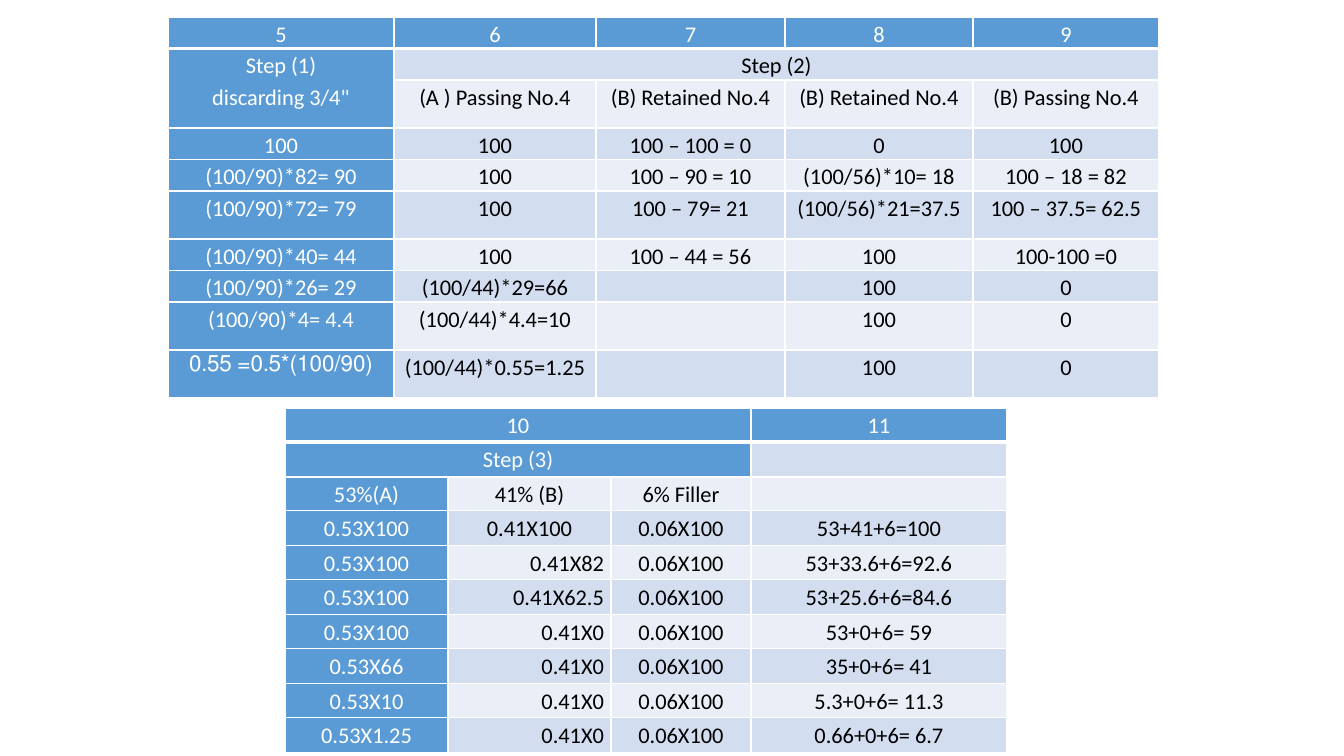
"""Build a slide with two tables of aggregate blending steps."""
from lxml import etree
from pptx import Presentation
from pptx.dml.color import RGBColor
from pptx.enum.text import PP_ALIGN
from pptx.oxml.ns import qn
from pptx.util import Pt

MID, RIGHT = PP_ALIGN.CENTER, PP_ALIGN.RIGHT
PX = 91440000 // 10080
BLUE, BANDS = "5B9BD5", ("EAEFF7", "D2DEEF")
WHITE, BLACK = "FFFFFF", "000000"


def color(code):
    return RGBColor.from_string(code)


def edge(cell, side, width):
    line = etree.SubElement(cell._tc.get_or_add_tcPr(), qn("a:ln" + side), w=str(Pt(width)))
    fill = etree.SubElement(line, qn("a:solidFill"))
    etree.SubElement(fill, qn("a:srgbClr"), val=WHITE)


steps = [
    ["5", "6", "7", "8", "9"],
    ["Step (1)\ndiscarding 3/4\"", "Step (2)", "", "", ""],
    ["", "(A ) Passing No.4", "(B) Retained No.4", "(B) Retained No.4", "(B) Passing No.4"],
    ["100", "100", "100 – 100 = 0", "0", "100"],
    ["(100/90)*82= 90", "100", "100 – 90 = 10", "(100/56)*10= 18", "100 – 18 = 82"],
    ["(100/90)*72= 79", "100", "100 – 79= 21", "(100/56)*21=37.5", "100 – 37.5= 62.5"],
    ["(100/90)*40= 44", "100", "100 – 44 = 56", "100", "100-100 =0"],
    ["(100/90)*26= 29", "(100/44)*29=66", "", "100", "0"],
    ["(100/90)*4= 4.4", "(100/44)*4.4=10", "", "100", "0"],
    ["(100/90)*0.5= 0.55", "(100/44)*0.55=1.25", "", "100", "0"],
]
mixes = [
    ("100", "100", "53+41+6=100"),
    ("100", "82", "53+33.6+6=92.6"),
    ("100", "62.5", "53+25.6+6=84.6"),
    ("100", "0", "53+0+6= 59"),
    ("66", "0", "35+0+6= 41"),
    ("10", "0", "5.3+0+6= 11.3"),
    ("1.25", "0", "0.66+0+6= 6.7"),
]
blend = [
    ["10", "", "", "11"],
    ["Step (3)", "", "", ""],
    ["53%(A)", "41% (B)", "6% Filler", ""],
]
blend += [["0.53X" + a, "0.41X" + b, "0.06X100", total] for a, b, total in mixes]

step_rtl = {(9, 0)}
blend_rtl = {(r, 0) for r in range(4, 10)} | {(r, 1) for r in range(4, 8)}
blend_right = {(r, 1) for r in range(4, 10)}

tables = [
    (steps, 168, 17, 378, [226, 202, 189, 188, 186],
     [25, 23, 48, 25, 25, 48, 25, 25, 48, 48],
     [(1, 0, 2, 0), (1, 1, 1, 4)], step_rtl, set()),
    (blend, 285, 408, 345, [163, 163, 140, 256], [34, 35] * 5,
     [(0, 0, 0, 2), (1, 0, 1, 2)], blend_rtl, blend_right),
]

deck = Presentation()
deck.slide_width, deck.slide_height = 1344 * PX, 756 * PX
slide = deck.slides.add_slide(deck.slide_layouts[6])

for data, left, top, high, cols, rows, spans, rtl, right in tables:
    frame = slide.shapes.add_table(len(rows), len(cols), left * PX, top * PX,
                                   sum(cols) * PX, high * PX)
    table = frame.table
    table.first_row = table.horz_banding = False
    for col, wide in zip(table.columns, cols):
        col.width = wide * PX
    for row, tall in zip(table.rows, rows):
        row.height = tall * PX
    frame.height = high * PX
    for r1, c1, r2, c2 in spans:
        table.cell(r1, c1).merge(table.cell(r2, c2))

    for r, row in enumerate(data):
        for c, text in enumerate(row):
            cell = table.cell(r, c)
            head = r == 0 or c == 0
            cell.margin_left = cell.margin_right = 7 * PX
            cell.margin_top = cell.margin_bottom = 0
            for side in "LRTB":
                edge(cell, side, 3 if r == 0 and side == "B" else 1)
            cell.fill.solid()
            cell.fill.fore_color.rgb = color(BLUE if head else BANDS[r % 2])
            if not text:
                continue
            body = cell.text_frame
            for i, words in enumerate(text.split("\n")):
                para = body.add_paragraph() if i else body.paragraphs[0]
                para.alignment = RIGHT if (r, c) in right else MID
                para.line_spacing = 1.15
                if (r, c) in rtl:
                    para._p.get_or_add_pPr().set("rtl", "1")
                run = para.add_run()
                run.text = words
                run.font.name = "Calibri"
                run.font.size = Pt(16)
                run.font.color.rgb = color(WHITE if head else BLACK)

deck.save("out.pptx")
